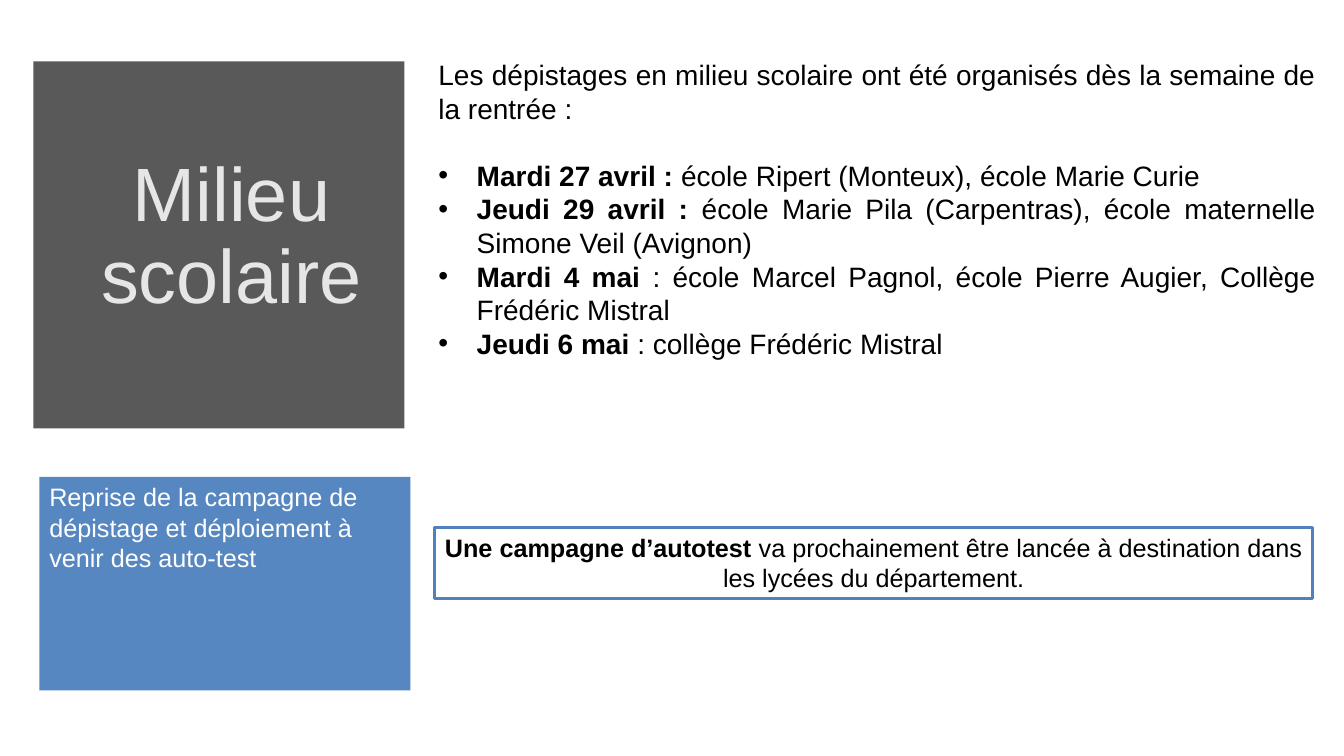
from lxml.etree import SubElement
from pptx import Presentation
from pptx.dml.color import RGBColor
from pptx.enum.shapes import MSO_SHAPE as Shape
from pptx.enum.text import MSO_ANCHOR as Anchor, MSO_AUTO_SIZE as AutoSize, PP_ALIGN as Align
from pptx.oxml.ns import qn
from pptx.util import Inches, Pt

COLORS = {"panel": "595959", "blue": "4F81BD", "title": "E7E6E6",
          "white": "FFFFFF", "black": "000000"}

INTRO = "Les dépistages en milieu scolaire ont été organisés dès la semaine de la rentrée :"
SCREENINGS = [
    ("Mardi 27 avril : ", "école Ripert (Monteux), école Marie Curie"),
    ("Jeudi 29 avril : ", "école Marie Pila (Carpentras), école maternelle Simone Veil (Avignon)"),
    ("Mardi 4 mai ", ": école Marcel Pagnol, école Pierre Augier, Collège Frédéric Mistral"),
    ("Jeudi 6 mai", " : collège Frédéric Mistral"),
]


def color(key):
    """Return the palette colour with the given name."""
    return RGBColor.from_string(COLORS[key])


def write(paragraph, text, lead="", size=18, ink="black", align=Align.LEFT,
          spacing=None, before=0, bullet=False):
    """Write a paragraph that may open with a bold lead."""
    paragraph.alignment = align
    paragraph.space_before = Pt(before)
    if spacing:
        paragraph.line_spacing = spacing
    if bullet:
        properties = paragraph._p.get_or_add_pPr()
        properties.set("marL", str(Inches(0.38)))
        properties.set("indent", str(-Inches(0.38)))
        SubElement(properties, qn("a:buFont"), typeface="Arial")
        SubElement(properties, qn("a:buChar"), char="•")
    for content, bold in ((lead, True), (text, False)):
        if content:
            run = paragraph.add_run()
            run.text = content
            run.font.name = "Arial"
            run.font.size = Pt(size)
            run.font.bold = bold
            run.font.color.rgb = color(ink)


def add_panel(slide, box, fill, line=None, opacity=None):
    """Add a flat rectangle with an optional outline and opacity in percent."""
    panel = slide.shapes.add_shape(Shape.RECTANGLE, *map(Inches, box))
    panel.shadow.inherit = False
    panel.fill.solid()
    panel.fill.fore_color.rgb = color(fill)
    if opacity:
        tint = panel.fill._xPr.find(qn("a:solidFill"))[0]
        SubElement(tint, qn("a:alpha"), val=str(opacity * 1000))
    if line:
        panel.line.color.rgb = color(line)
        panel.line.width = Pt(2)
    else:
        panel.line.fill.background()
    panel.text_frame.word_wrap = True
    panel.text_frame.vertical_anchor = Anchor.TOP
    return panel


def add_heading(slide, box):
    """Place the slide title on its dark panel."""
    left, top, width, height = box
    panel = add_panel(slide, box, "panel")
    title = slide.shapes.title
    title.element.addprevious(panel.element)
    title.left, title.top = Inches(left + 0.43), Inches(top + 0.89)
    title.width, title.height = Inches(width - 0.61), Inches(height - 1.94)
    frame = title.text_frame
    frame.word_wrap = True
    frame.auto_size = AutoSize.NONE
    frame.vertical_anchor = Anchor.TOP
    write(frame.paragraphs[0], "Milieu scolaire", size=54, ink="title",
          align=Align.CENTER, spacing=0.9)


def add_summary(slide, box):
    """Add the blue panel that sums up the campaign."""
    panel = add_panel(slide, box, "blue", opacity=95)
    write(panel.text_frame.paragraphs[0],
          "Reprise de la campagne de dépistage et déploiement à venir des auto-test",
          ink="white")


def add_schedule(slide, box):
    """Add the introduction and the dated list of screenings."""
    frame = slide.shapes.add_textbox(*map(Inches, box)).text_frame
    frame.word_wrap = True
    write(frame.paragraphs[0], INTRO, size=20, align=Align.JUSTIFY)
    for index, (date, schools) in enumerate(SCREENINGS):
        write(frame.add_paragraph(), schools, lead=date, size=20, align=Align.JUSTIFY,
              before=0 if index else 24, bullet=True)


def add_announcement(slide, box):
    """Add the outlined announcement of the self-test campaign."""
    panel = add_panel(slide, box, "white", line="blue")
    write(panel.text_frame.paragraphs[0],
          "va prochainement être lancée à destination dans les lycées du département.",
          lead="Une campagne d’autotest ", align=Align.CENTER)


def main():
    """Build and save the slide."""
    deck = Presentation()
    deck.slide_width, deck.slide_height = Inches(13.33), Inches(7.5)
    slide = deck.slides.add_slide(deck.slide_layouts[5])
    add_heading(slide, (0.33, 0.61, 3.68, 3.64))
    add_summary(slide, (0.39, 4.73, 3.68, 2.12))
    add_schedule(slide, (4.25, 0.52, 8.9, 4.51))
    add_announcement(slide, (4.31, 5.23, 8.71, 0.71))
    deck.save("out.pptx")


if __name__ == "__main__":
    main()
